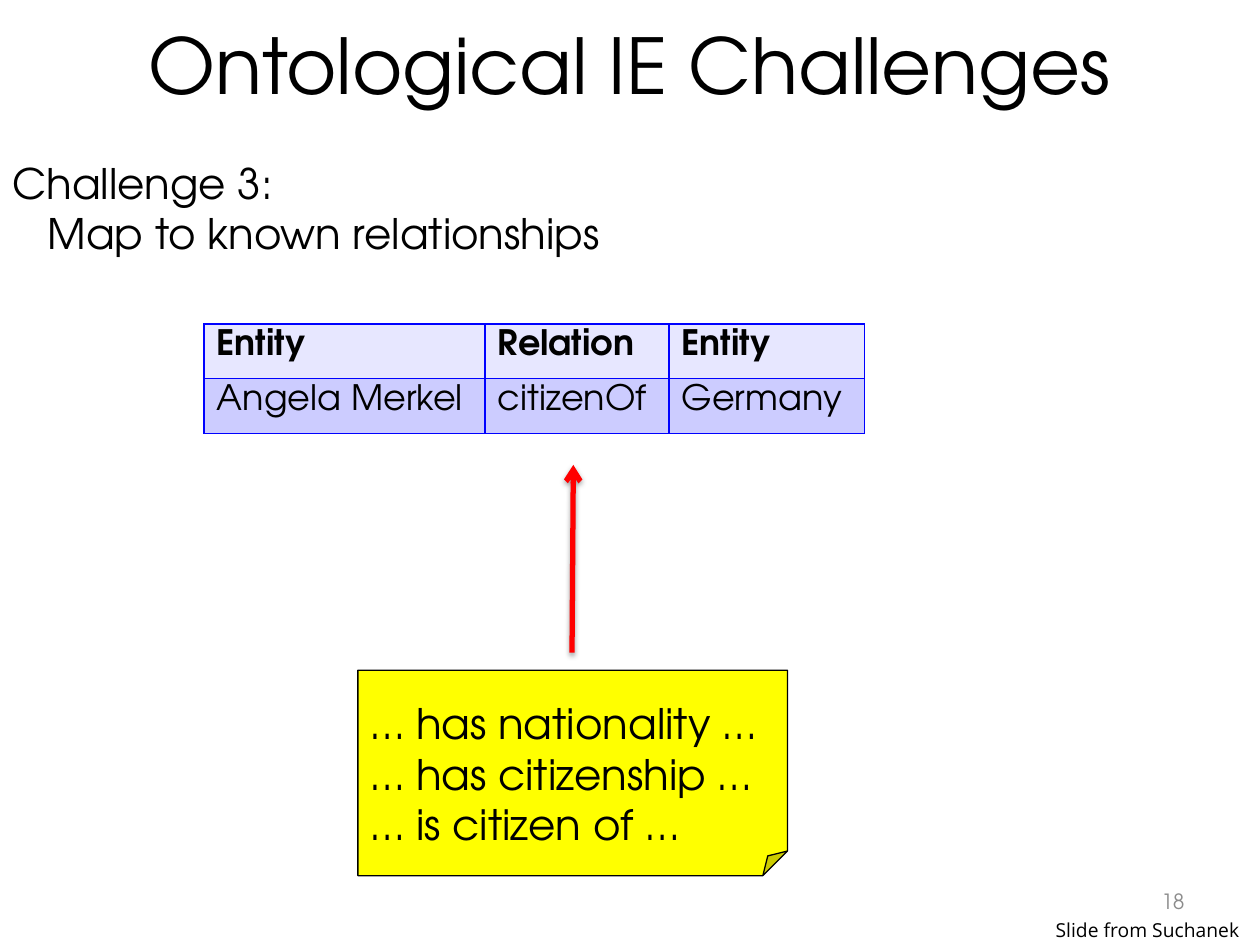
from lxml.etree import SubElement
from pptx import Presentation
from pptx.dml.color import RGBColor
from pptx.enum.shapes import MSO_CONNECTOR, MSO_SHAPE
from pptx.enum.text import MSO_ANCHOR, PP_ALIGN
from pptx.oxml import parse_xml
from pptx.oxml.ns import nsdecls, qn
from pptx.util import Inches, Pt

COLORS = {
    "text": "000000",
    "number": "8C8C8C",
    "header": "E7E7FF",
    "row": "CCCCFF",
    "border": "0001FF",
    "arrow": "FF0000",
    "note": "FFFF00",
}
MAIN_FONT = "TeX Gyre Adventor"


def write(frame, lines, size, color="text", font=MAIN_FONT, bold=False,
          align=PP_ALIGN.LEFT, anchor=MSO_ANCHOR.TOP):
    frame.vertical_anchor = anchor
    for index, line in enumerate(lines):
        paragraph = frame.paragraphs[0] if index == 0 else frame.add_paragraph()
        paragraph.alignment = align
        run = paragraph.add_run()
        run.text = line
        run.font.size = Pt(size)
        run.font.name = font
        run.font.bold = bold
        run.font.color.rgb = RGBColor.from_string(COLORS[color])


def add_text(box, lines, size, wrap=True, **style):
    frame = slide.shapes.add_textbox(*map(Inches, box)).text_frame
    frame.word_wrap = wrap
    write(frame, lines, size, **style)
    return frame


prs = Presentation()
prs.slide_width = Inches(10)
prs.slide_height = Inches(7.5)
slide = prs.slides.add_slide(prs.slide_layouts[6])

add_text((0.5, 0, 9, 1.01), ["Ontological IE Challenges"], 44,
         align=PP_ALIGN.CENTER, anchor=MSO_ANCHOR.MIDDLE)
add_text((7.17, 6.95, 2.33, 0.4), ["18"], 12, color="number",
         align=PP_ALIGN.RIGHT, anchor=MSO_ANCHOR.MIDDLE)
challenge = add_text((0, 1.2, 10, 0.91),
                     ["Challenge 3:", "Map to known relationships"], 24)
challenge.paragraphs[1]._p.get_or_add_pPr().set("marL", str(Inches(0.28)))

facts = [
    ["Entity", "Relation", "Entity"],
    ["Angela Merkel", "citizenOf", "Germany"],
]
column_widths = [2.23, 1.46, 1.55]
table_height = 0.87
fact_table = slide.shapes.add_table(
    len(facts), len(column_widths), Inches(1.62), Inches(2.57),
    Inches(sum(column_widths)), Inches(table_height)).table
for column, width in zip(fact_table.columns, column_widths):
    column.width = Inches(width)
for row_index, words in enumerate(facts):
    is_header = row_index == 0
    for column_index, word in enumerate(words):
        cell = fact_table.cell(row_index, column_index)
        write(cell.text_frame, [word], 20, bold=is_header)
        properties = cell._tc.get_or_add_tcPr()
        for side in ("lnL", "lnR", "lnT", "lnB"):
            border = SubElement(properties, qn(f"a:{side}"), w=str(Pt(1)))
            border_fill = SubElement(border, qn("a:solidFill"))
            SubElement(border_fill, qn("a:srgbClr"), val=COLORS["border"])
        cell.fill.solid()
        cell.fill.fore_color.rgb = RGBColor.from_string(
            COLORS["header" if is_header else "row"])

arrow = slide.shapes.add_connector(
    MSO_CONNECTOR.STRAIGHT, Inches(4.54), Inches(5.18), Inches(4.55), Inches(3.69))
arrow.line.color.rgb = RGBColor.from_string(COLORS["arrow"])
arrow.line.width = Pt(3)
SubElement(arrow.line._get_or_add_ln(), qn("a:tailEnd"), type="arrow")
arrow._element.spPr.append(parse_xml(
    f'<a:effectLst {nsdecls("a")}>'
    f'<a:outerShdw blurRad="{Pt(3.1)}" dist="{Pt(1.6)}" dir="5400000" rotWithShape="0">'
    f'<a:srgbClr val="{COLORS["text"]}"><a:alpha val="38000"/></a:srgbClr>'
    '</a:outerShdw></a:effectLst>'))

note = slide.shapes.add_shape(
    MSO_SHAPE.FOLDED_CORNER, Inches(2.84), Inches(5.32), Inches(3.41), Inches(1.63))
fold = note._element.spPr.find(qn("a:prstGeom")).get_or_add_avLst()
SubElement(fold, qn("a:gd"), name="adj", fmla="val 12000")
note.shadow.inherit = False
note.fill.solid()
note.fill.fore_color.rgb = RGBColor.from_string(COLORS["note"])
note.line.color.rgb = RGBColor.from_string(COLORS["text"])
note.line.width = Pt(0.75)
note.text_frame.margin_top = Inches(0.2)
note.text_frame.margin_bottom = 0
write(note.text_frame,
      ["… has nationality …", "… has citizenship …", "… is citizen of …"],
      24, anchor=MSO_ANCHOR.MIDDLE)

add_text((8.28, 7.24, 1.72, 0.29), ["Slide from Suchanek"], 11,
         wrap=False, font="Open Sans")

prs.save("out.pptx")
